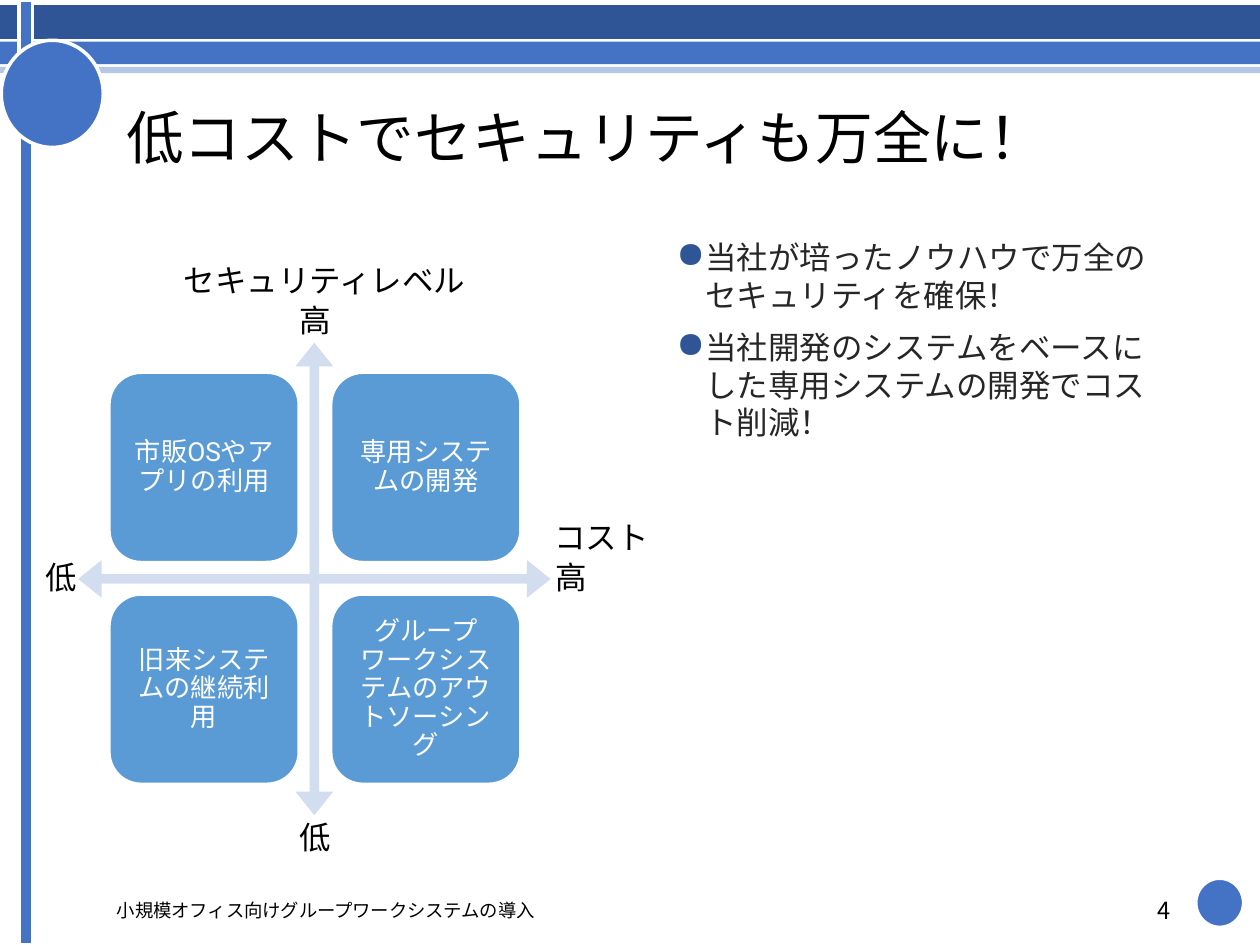
from lxml.etree import SubElement
from pptx import Presentation
from pptx.dml.color import RGBColor
from pptx.enum.shapes import MSO_SHAPE as Shape
from pptx.enum.text import MSO_ANCHOR as Anchor, PP_ALIGN as Align
from pptx.oxml.ns import qn
from pptx.util import Inches, Pt

THEME = {
    "navy": "2F5597", "blue": "4472C4", "pale": "B4C7E7", "axis": "D2DEEF",
    "tile": "5B9BD5", "white": "FFFFFF", "black": "000000", "ink": "262626",
    "latin": "Roboto", "japanese": "Noto Sans CJK JP",
    "title": 33, "body": 18, "tile_text": 15, "footer": 10.5, "number": 13.5,
}


def add_figure(kind, box, fill, outline=0):
    figure = slide.shapes.add_shape(kind, *map(Inches, box))
    figure.shadow.inherit = False
    figure.fill.solid()
    figure.fill.fore_color.rgb = RGBColor.from_string(THEME[fill])
    if outline:
        figure.line.color.rgb = RGBColor.from_string(THEME["white"])
        figure.line.width = Pt(outline)
    else:
        figure.line.fill.background()
    return figure


def write(frame, lines, size, font="latin", color="black", align=Align.LEFT, **settings):
    for name, value in {"word_wrap": True, **settings}.items():
        setattr(frame, name, value)
    frame.text = "\n".join(lines)
    for paragraph in frame.paragraphs:
        paragraph.alignment = align
        paragraph.font.size = Pt(THEME[size])
        paragraph.font.name = THEME[font]
        paragraph.font.color.rgb = RGBColor.from_string(THEME[color])
    return frame.paragraphs


presentation = Presentation()
presentation.slide_width, presentation.slide_height = Inches(10), Inches(7.5)
slide = presentation.slides.add_slide(presentation.slide_layouts[5])

for top, height, fill in [(0.04, 0.27, "navy"), (0.33, 0.18, "blue"), (0.53, 0.05, "pale")]:
    add_figure(Shape.RECTANGLE, (0, top, 10, height), fill)
add_figure(Shape.RECTANGLE, (0.15, 0, 0.11, 7.5), "blue", 2)
for circle in [(0.01, 0.32, 0.81, 0.85), (9.49, 6.97, 0.38, 0.39)]:
    add_figure(Shape.OVAL, circle, "blue", 2)

title = slide.shapes.title
title_box = {"left": 0.9, "top": 0.29, "width": 8.25, "height": 1.59}
for side, length in title_box.items():
    setattr(title, side, Inches(length))
write(title.text_frame, ["低コストでセキュリティも万全に！"], "title",
      vertical_anchor=Anchor.MIDDLE)

axes = add_figure(Shape.QUAD_ARROW, (0.62, 2.72, 3.75, 3.75), "axis")
for index, ratio in enumerate((0.02, 0.04, 0.05)):
    axes.adjustments[index] = ratio

options = ["市販OSやアプリの利用", "専用システムの開発",
           "旧来システムの継続利用", "グループワークシステムのアウトソーシング"]
tile_margins = {f"margin_{side}": Inches(0.06) for side in ("left", "right", "top", "bottom")}
for index, option in enumerate(options):
    row, column = divmod(index, 2)
    tile = add_figure(Shape.ROUNDED_RECTANGLE,
                      (0.87 + 1.76 * column, 2.96 + 1.76 * row, 1.5, 1.5), "tile", 1.25)
    for paragraph in write(tile.text_frame, [option], "tile_text", color="white",
                           align=Align.CENTER, vertical_anchor=Anchor.MIDDLE, **tile_margins):
        paragraph.line_spacing = 0.9

points = ["当社が培ったノウハウで万全のセキュリティを確保！",
          "当社開発のシステムをベースにした専用システムの開発でコスト削減！"]
benefits = slide.shapes.add_textbox(*map(Inches, (5.27, 1.84, 4.11, 4.74)))
for paragraph in write(benefits.text_frame, points, "body", "japanese", "ink"):
    paragraph.space_before, paragraph.space_after = Pt(3.6), Pt(4.5)
    properties = paragraph._p.get_or_add_pPr()
    properties.set("marL", str(Inches(0.23)))
    properties.set("indent", str(Inches(-0.23)))
    bullet_color = SubElement(properties, qn("a:buClr"))
    SubElement(bullet_color, qn("a:srgbClr"), val=THEME["navy"])
    SubElement(properties, qn("a:buSzPct"), val="115000")
    SubElement(properties, qn("a:buChar"), char="●")

footers = [
    ("小規模オフィス向けグループワークシステムの導入", 0.83, 5.78, "footer", Align.LEFT),
    ("4", 8.79, 0.6, "number", Align.RIGHT),
]
for text, left, width, size, align in footers:
    footer = slide.shapes.add_textbox(*map(Inches, (left, 7.07, width, 0.31)))
    write(footer.text_frame, [text], size, "japanese", align=align,
          vertical_anchor=Anchor.MIDDLE)

axis_labels = [
    ("コスト", 4.3, 4.06, 0.96), ("セキュリティレベル", 1.36, 2.02, 2.47),
    ("高", 4.31, 4.38, 0.45), ("低", 0.26, 4.38, 0.45),
    ("高", 2.28, 2.34, 0.45), ("低", 2.28, 6.44, 0.45),
]
for text, left, top, width in axis_labels:
    label = slide.shapes.add_textbox(*map(Inches, (left, top, width, 0.4)))
    write(label.text_frame, [text], "body", word_wrap=False)

presentation.save("out.pptx")
